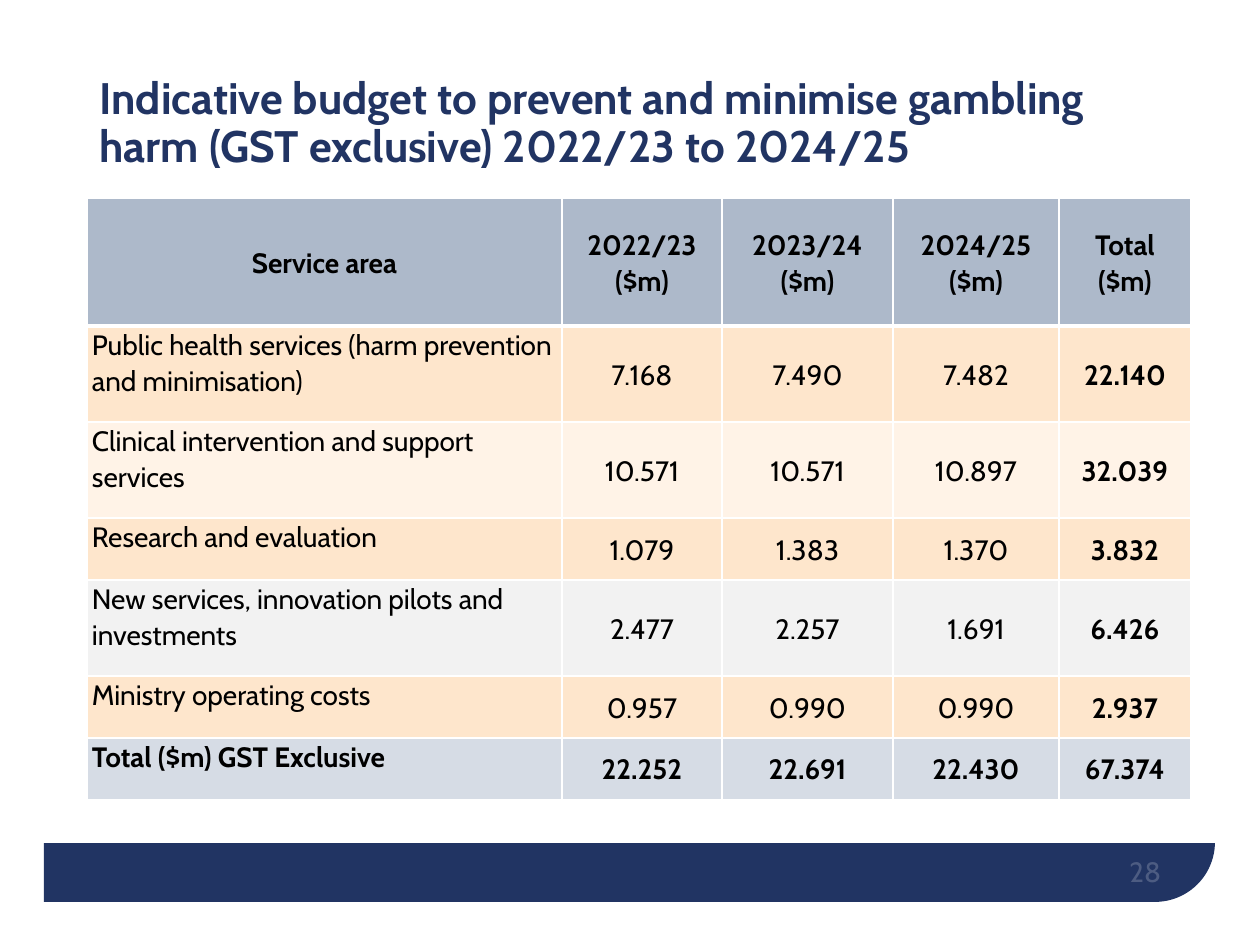
import lxml.etree
import pptx
import pptx.dml.color
import pptx.enum.shapes
import pptx.enum.text
import pptx.oxml
import pptx.oxml.ns
import pptx.util

PX = 914400 / 126
COLOURS = {
    "navy": "213463", "white": "FFFFFF", "black": "000000",
    "header": "ADB9CA", "peach": "FEE6CC", "cream": "FFF3E7",
    "grey": "F2F2F2", "total": "D6DCE5",
}
RGB = {name: pptx.dml.color.RGBColor.from_string(code) for name, code in COLOURS.items()}
ALIGN = pptx.enum.text.PP_ALIGN
ANCHOR = pptx.enum.text.MSO_ANCHOR
qn = pptx.oxml.ns.qn


def write(frame, text, size=16, colour="black", bold=False, align=ALIGN.LEFT,
          spacing=1.07, after=0):
    """Fill a text frame with one formatted paragraph and return it."""
    frame.word_wrap = True
    frame.text = text
    para = frame.paragraphs[0]
    para.alignment = align
    para.line_spacing = spacing
    para.space_before = pptx.util.Pt(0)
    para.space_after = pptx.util.Pt(after)
    for span in para.runs:
        span.font.name = "Cabin"
        span.font.size = pptx.util.Pt(size)
        span.font.bold = bold
        span.font.color.rgb = RGB[colour]
    return para


def add_border(cell, side, points):
    line = lxml.etree.SubElement(cell._tc.get_or_add_tcPr(), qn(f"a:ln{side}"),
                                 w=str(pptx.util.Pt(points)))
    fill = lxml.etree.SubElement(line, qn("a:solidFill"))
    lxml.etree.SubElement(fill, qn("a:srgbClr"), val=COLOURS["white"])


deck = pptx.Presentation()
deck.slide_width = round(1260 * PX)
deck.slide_height = round(945 * PX)
page = deck.slides.add_slide(deck.slide_layouts[5])

# Footer band: a navy panel with one round corner, mostly under a white panel
kinds = pptx.enum.shapes.MSO_SHAPE
for kind, colour, bounds in [
    (kinds.ROUND_1_RECTANGLE, "navy", (44, 47, 1171, 855)),
    (kinds.RECTANGLE, "white", (0, 0, 1260, 843)),
]:
    panel = page.shapes.add_shape(kind, *[round(n * PX) for n in bounds])
    panel.shadow.inherit = False
    panel.fill.solid()
    panel.fill.fore_color.rgb = RGB[colour]
    panel.line.fill.background()
    if kind == kinds.ROUND_1_RECTANGLE:
        panel.adjustments[0] = 0.07
        panel.element.spPr.find(qn("a:xfrm")).set("flipV", "1")

# Page number
box = page.shapes.add_textbox(*[round(n * PX) for n in (878, 838, 283, 50)])
frame = box.text_frame
frame.margin_left = frame.margin_top = frame.margin_right = frame.margin_bottom = 0
frame.vertical_anchor = ANCHOR.BOTTOM
number = write(frame, "28", colour="white", align=ALIGN.RIGHT, spacing=1)
shade = number.runs[0].font.fill._xPr.find(".//" + qn("a:srgbClr"))
lxml.etree.SubElement(shade, qn("a:alpha"), val="20000")

# Budget table
ROWS = [
    ("header", 128, ["Service area", "2022/23\v($m)", "2023/24\v($m)", "2024/25\v($m)", "Total\v($m)"]),
    ("peach", 96, ["Public health services (harm prevention and minimisation)",
                   "7.168", "7.490", "7.482", "22.140"]),
    ("cream", 96, ["Clinical intervention and support services",
                   "10.571", "10.571", "10.897", "32.039"]),
    ("peach", 62, ["Research and evaluation", "1.079", "1.383", "1.370", "3.832"]),
    ("grey", 96, ["New services, innovation pilots and investments",
                  "2.477", "2.257", "1.691", "6.426"]),
    ("peach", 62, ["Ministry operating costs", "0.957", "0.990", "0.990", "2.937"]),
    ("total", 62, ["Total ($m) GST Exclusive", "22.252", "22.691", "22.430", "67.374"]),
]
WIDTHS = [475, 160, 171, 166, 132]
bounds = (87, 198, sum(WIDTHS), sum(height for _, height, _ in ROWS))
table = page.shapes.add_table(len(ROWS), len(WIDTHS), *[round(n * PX) for n in bounds]).table
for column, width in zip(table.columns, WIDTHS):
    column.width = round(width * PX)

for r, (colour, height, texts) in enumerate(ROWS):
    table.rows[r].height = round(height * PX)
    strong_row = colour in ("header", "total")
    for c, text in enumerate(texts):
        cell = table.cell(r, c)
        centred = c > 0 or colour == "header"
        cell.margin_left = cell.margin_right = round(5 * PX)
        cell.margin_top = cell.margin_bottom = 0
        cell.vertical_anchor = ANCHOR.MIDDLE if centred else ANCHOR.TOP
        for side in "LRTB":
            under_header = (r, side) in [(0, "B"), (1, "T")]
            add_border(cell, side, 3 if under_header else 1)
        cell.fill.solid()
        cell.fill.fore_color.rgb = RGB[colour]
        write(cell.text_frame, text, bold=strong_row or c == len(WIDTHS) - 1,
              align=ALIGN.CENTER if centred else ALIGN.LEFT,
              after=3 if strong_row else 0)

# Title, brought in front of the white panel
title = page.shapes.title
title.left, title.top, title.width, title.height = [round(n * PX) for n in (87, 50, 1086, 148)]
title.text_frame.vertical_anchor = ANCHOR.MIDDLE
title.text_frame.auto_size = pptx.enum.text.MSO_AUTO_SIZE.NONE
write(title.text_frame,
      "Indicative budget to prevent and minimise gambling harm (GST exclusive) 2022/23 to 2024/25",
      size=25.2, colour="navy", bold=True, spacing=0.9)
title.element.getparent().append(title.element)

deck.save("out.pptx")
